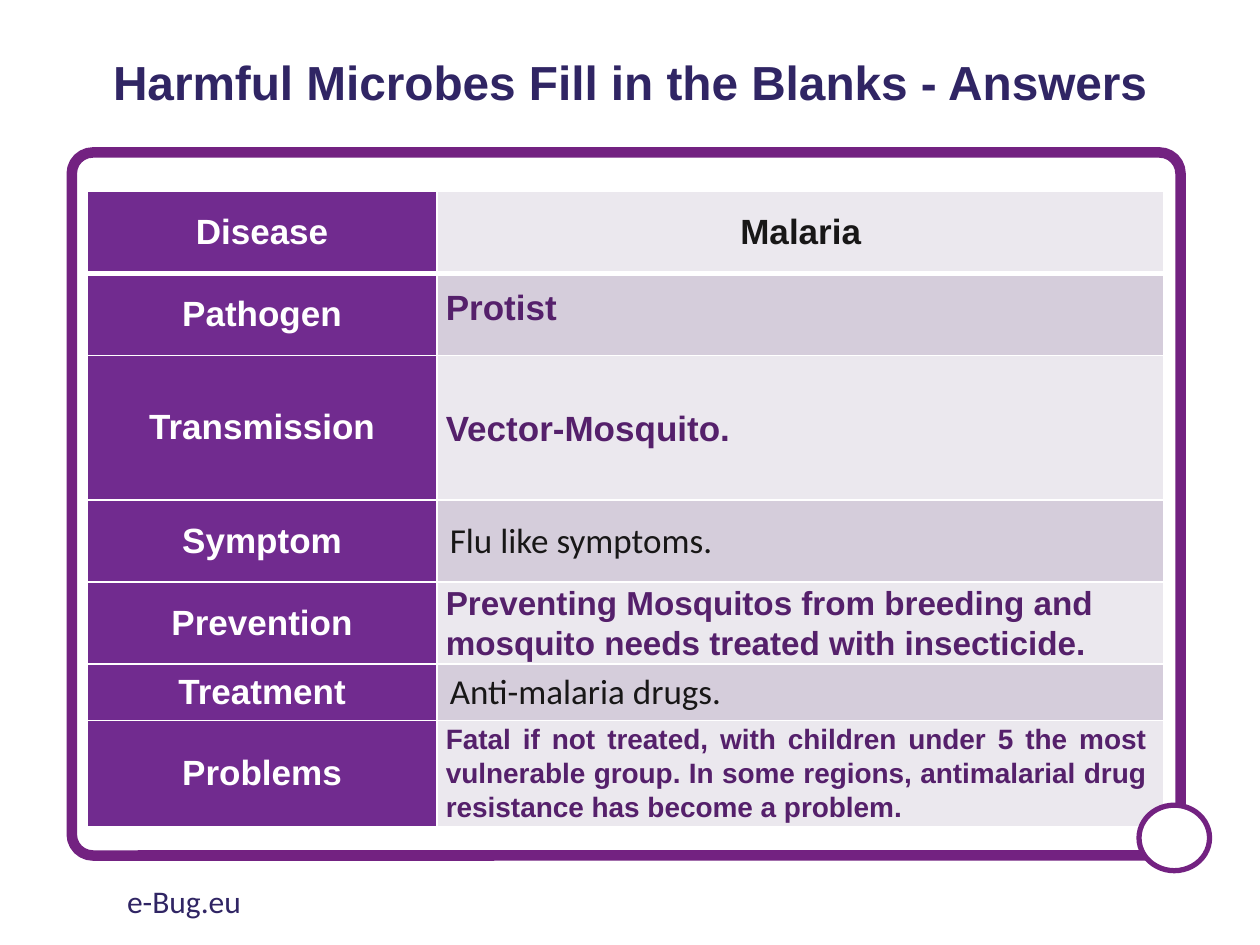
from pptx import Presentation
from pptx.dml.color import RGBColor
from pptx.enum.shapes import MSO_SHAPE
from pptx.enum.text import MSO_ANCHOR, PP_ALIGN
from pptx.oxml.ns import qn
from pptx.util import Inches, Pt
from lxml import etree

LEFT, CENTER, JUSTIFY = PP_ALIGN.LEFT, PP_ALIGN.CENTER, PP_ALIGN.JUSTIFY
TOP, MIDDLE = MSO_ANCHOR.TOP, MSO_ANCHOR.MIDDLE
ROUNDED, OVAL = MSO_SHAPE.ROUNDED_RECTANGLE, MSO_SHAPE.OVAL

WHITE = RGBColor(0xFF, 0xFF, 0xFF)
NAVY = RGBColor(0x30, 0x25, 0x64)
INK = RGBColor(0x18, 0x17, 0x17)
HEADING_FILL = RGBColor(0x71, 0x2B, 0x8F)
LIGHT_BAND = RGBColor(0xEB, 0xE8, 0xEE)
DARK_BAND = RGBColor(0xD5, 0xCD, 0xDB)
ANSWER = RGBColor(0x55, 0x20, 0x6B)
FRAME = RGBColor(0x73, 0x22, 0x81)

GRID_COLUMNS, GRID_ROWS = 100, 75
ANSWER_LEFT = 34.4
COLUMN_WIDTHS = (27.8, 57.7)
TABLE_ROWS = [
    ("Disease", "Malaria", 6.5),
    ("Pathogen", "", 6.5),
    ("Transmission", "", 11.5),
    ("Symptom", "Flu like symptoms.", 6.5),
    ("Prevention", "", 6.5),
    ("Treatment", "Anti-malaria drugs.", 4.5),
    ("Problems", "", 8.4),
]
ANSWERS = [
    ("Protist", 22.2, 53, 4.4, 20, LEFT),
    ("Vector-Mosquito.", 31.8, 53, 4.4, 20, LEFT),
    ("Preventing Mosquitos from breeding and mosquito needs treated with insecticide.",
     45.7, 57.1, 7.4, 19, LEFT),
    ("Fatal if not treated, with children under 5 the most vulnerable group. "
     "In some regions, antimalarial drug resistance has become a problem.",
     56.8, 57.6, 9.1, 16, JUSTIFY),
]


class SlideBuilder:
    """Draws styled elements on one slide, measured in grid columns and rows."""

    def __init__(self, presentation):
        self.slide = presentation.slides.add_slide(presentation.slide_layouts[6])
        self.column = presentation.slide_width / GRID_COLUMNS
        self.row = presentation.slide_height / GRID_ROWS

    def across(self, columns):
        return round(columns * self.column)

    def down(self, rows):
        return round(rows * self.row)

    def box(self, left, top, width, height):
        return self.across(left), self.down(top), self.across(width), self.down(height)

    def fill_text(self, text_frame, text, size, color, font="Arial", bold=True, align=LEFT):
        text_frame.text = text
        paragraph = text_frame.paragraphs[0]
        paragraph.alignment = align
        for run in paragraph.runs:
            run.font.name = font
            run.font.size = Pt(size)
            run.font.bold = bold
            run.font.color.rgb = color
        return paragraph

    def text(self, area, text, size, color, anchor=TOP, **style):
        text_frame = self.slide.shapes.add_textbox(*self.box(*area)).text_frame
        text_frame.word_wrap = True
        text_frame.vertical_anchor = anchor
        return self.fill_text(text_frame, text, size, color, **style)

    def outline(self, kind, area, width, fill=None):
        shape = self.slide.shapes.add_shape(kind, *self.box(*area))
        shape.shadow.inherit = False
        if fill is None:
            shape.fill.background()
        else:
            shape.fill.solid()
            shape.fill.fore_color.rgb = fill
        shape.line.color.rgb = FRAME
        shape.line.width = Pt(width)
        return shape

    def borders(self, cell, top, bottom):
        properties = cell._tc.get_or_add_tcPr()
        for side, width in (("L", 1), ("R", 1), ("T", top), ("B", bottom)):
            line = etree.SubElement(properties, qn(f"a:ln{side}"), w=str(Pt(width)))
            fill = etree.SubElement(line, qn("a:solidFill"))
            etree.SubElement(fill, qn("a:srgbClr"), val=str(WHITE))

    def cell(self, cell, text, fill, row_number, color, **style):
        self.borders(cell, 3 if row_number == 1 else 1, 3 if row_number == 0 else 1)
        cell.fill.solid()
        cell.fill.fore_color.rgb = fill
        cell.vertical_anchor = MIDDLE
        self.fill_text(cell.text_frame, text, 20, color, **style)

    def table(self, left, top, rows):
        area = (left, top, sum(COLUMN_WIDTHS), sum(height for *_, height in rows))
        table = self.slide.shapes.add_table(
            len(rows), len(COLUMN_WIDTHS), *self.box(*area)).table
        for column, width in zip(table.columns, COLUMN_WIDTHS):
            column.width = self.across(width)
        for number, (heading, value, height) in enumerate(rows):
            table.rows[number].height = self.down(height)
            self.cell(table.cell(number, 0), heading, HEADING_FILL, number, WHITE,
                      align=CENTER)
            style = {"align": CENTER} if number == 0 else {"font": "Calibri", "bold": False}
            band = DARK_BAND if number % 2 else LIGHT_BAND
            self.cell(table.cell(number, 1), value, band, number, INK, **style)


def main():
    presentation = Presentation()
    presentation.slide_width = Inches(10)
    presentation.slide_height = Inches(7.5)
    builder = SlideBuilder(presentation)

    title = builder.text((6.9, 2, 86.2, 9.5), "Harmful Microbes Fill in the Blanks - Answers",
                         27.3, NAVY, anchor=MIDDLE, align=CENTER)
    title.line_spacing = 0.9
    builder.table(6.9, 15.2, TABLE_ROWS)
    for text, top, width, height, size, align in ANSWERS:
        builder.text((ANSWER_LEFT, top, width, height), text, size, ANSWER, align=align)
    frame = builder.outline(ROUNDED, (5.7, 12.1, 88, 55.8), 6)
    frame.adjustments[0] = 0.03
    builder.outline(OVAL, (90.4, 63.9, 5.6, 5.2), 3, WHITE)
    builder.text((9.1, 69.5, 33.8, 4), "e-Bug.eu", 18, NAVY, font="Calibri", bold=False)

    presentation.save("out.pptx")


if __name__ == "__main__":
    main()
